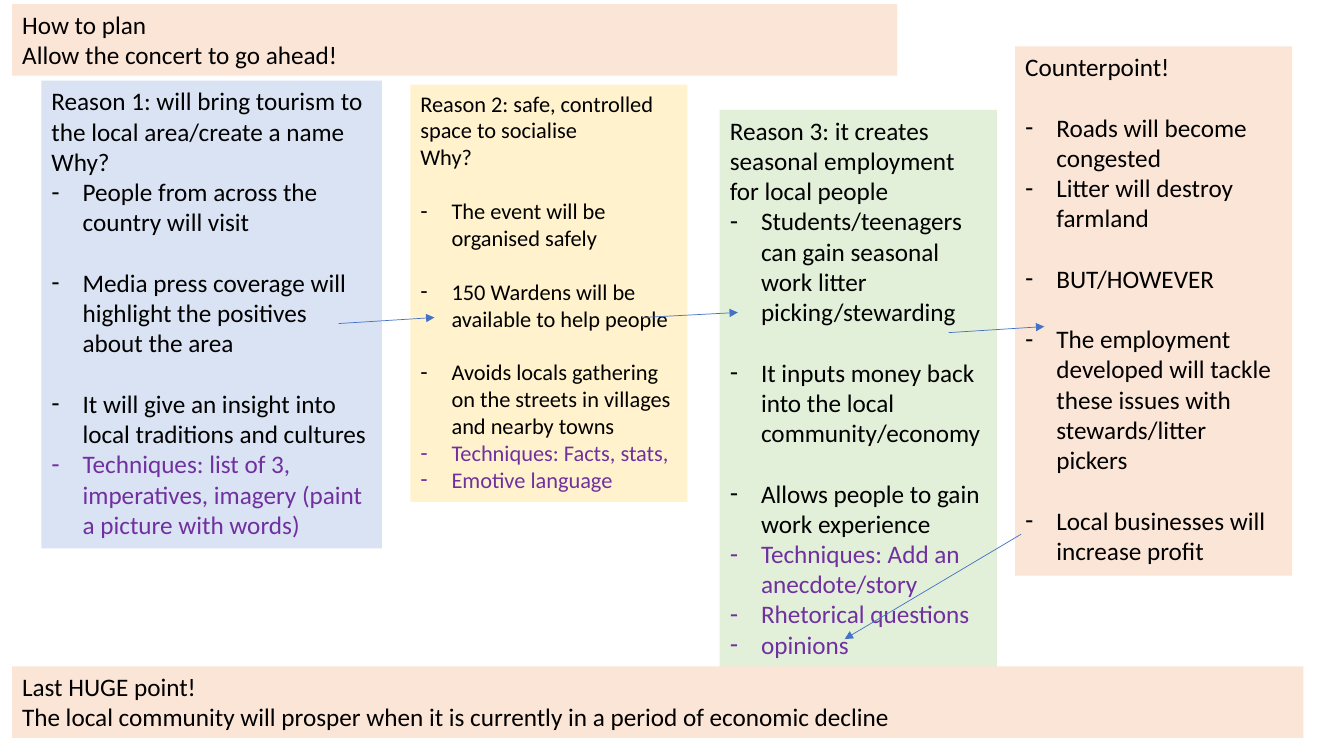
from lxml.etree import SubElement
from pptx import Presentation
from pptx.dml.color import RGBColor
from pptx.enum.shapes import MSO_CONNECTOR
from pptx.enum.text import MSO_ANCHOR, MSO_AUTO_SIZE, PP_ALIGN
from pptx.oxml.ns import qn
from pptx.util import Inches, Pt

COLOURS = {
    "blue": "DAE3F3",
    "peach": "FBE5D6",
    "yellow": "FFF2CC",
    "green": "E2F0D9",
    "black": "000000",
    "purple": "7030A0",
    "arrow": "4472C4",
}
COMPARISON_LAYOUT = 4
GRID_COLUMNS, GRID_ROWS = 160, 90
LINE_HEIGHT = 1.2

POINT = {"bullet": True}
SPACED_POINT = {"bullet": True, "gap": True}
TECHNIQUE = {"bullet": True, "colour": "purple"}

HEADING = [("How to plan", {}), ("Allow the concert to go ahead!", {})]
CONCLUSION = [
    ("Last HUGE point!", {}),
    ("The local community will prosper when it is currently in a period of economic decline", {}),
]
TOURISM = [
    ("Reason 1: will bring tourism to the local area/create a name", {}),
    ("Why?", {}),
    ("People from across the country will visit", POINT),
    ("Media press coverage will highlight the positives about the area", SPACED_POINT),
    ("It will give an insight into local traditions and cultures", SPACED_POINT),
    ("Techniques: list of 3, imperatives, imagery (paint a picture with words)", TECHNIQUE),
]
SAFETY = [
    ("Reason 2: safe, controlled space to socialise", {}),
    ("Why?", {}),
    ("The event will be organised safely", SPACED_POINT),
    ("150 Wardens will be available to help people", SPACED_POINT),
    ("Avoids locals gathering on the streets in villages and nearby towns", SPACED_POINT),
    ("Techniques: Facts, stats,", TECHNIQUE),
    ("Emotive language", TECHNIQUE),
]
EMPLOYMENT = [
    ("Reason 3: it creates seasonal employment for local people", {}),
    ("Students/teenagers can gain seasonal work litter picking/stewarding", POINT),
    ("It inputs money back into the local community/economy", SPACED_POINT),
    ("Allows people to gain work experience", SPACED_POINT),
    ("Techniques: Add an anecdote/story", TECHNIQUE),
    ("Rhetorical questions", TECHNIQUE),
    ("opinions", TECHNIQUE),
]
COUNTERPOINT = [
    ("Counterpoint!", {}),
    ("Roads will become congested", SPACED_POINT),
    ("Litter will destroy farmland", POINT),
    ("BUT/HOWEVER", SPACED_POINT),
    ("The employment developed will tackle these issues with stewards/litter pickers", SPACED_POINT),
    ("Local businesses will increase profit", SPACED_POINT),
]
REASONS = [
    (1, TOURISM, (4.92, 9.6, 40.56, 55.68), "blue", 18),
    (2, SAFETY, (48.84, 10.08, 33, 49.68), "yellow", 16),
    (3, EMPLOYMENT, (85.68, 13.08, 33, 66.6), "green", 18),
    (4, COUNTERPOINT, (120.84, 5.52, 33, 63), "peach", 18),
]
ARROWS = [
    ((40.32, 38.52), (51.72, 37.8)),
    ((76.44, 37.8), (87.84, 37.2)),
    ((112.92, 39.6), (124.32, 38.88)),
    ((121.56, 63.6), (100.56, 76.08)),
]


def write(para, text, size=18, colour="black", bullet=False, gap=False, font="Calibri"):
    properties = para._p.get_or_add_pPr()
    indent = Inches(0.31) if bullet else 0
    properties.set("marL", str(indent))
    properties.set("indent", str(-indent))
    if bullet:
        SubElement(properties, qn("a:buChar"), char="-")
    else:
        SubElement(properties, qn("a:buNone"))
    para.alignment = PP_ALIGN.LEFT
    para.line_spacing = 1.0
    para.space_before = Pt(size * LINE_HEIGHT if gap else 0)
    para.space_after = Pt(0)
    span = para.add_run()
    span.text = text
    span.font.name = font
    span.font.size = Pt(size)
    span.font.bold = False
    span.font.color.rgb = RGBColor.from_string(COLOURS[colour])


class PlanSlide:
    def __init__(self, deck):
        self.page = deck.slides.add_slide(deck.slide_layouts[COMPARISON_LAYOUT])
        self.column = deck.slide_width / GRID_COLUMNS
        self.row = deck.slide_height / GRID_ROWS

    def place(self, column, row):
        return round(column * self.column), round(row * self.row)

    def fill_box(self, box, lines, area, colour, size=18):
        box.left, box.top = self.place(*area[:2])
        box.width, box.height = self.place(*area[2:])
        box.fill.solid()
        box.fill.fore_color.rgb = RGBColor.from_string(COLOURS[colour])
        frame = box.text_frame
        frame.word_wrap = True
        frame.auto_size = MSO_AUTO_SIZE.NONE
        frame.vertical_anchor = MSO_ANCHOR.TOP
        frame.margin_left = frame.margin_right = Inches(0.1)
        frame.margin_top = frame.margin_bottom = Inches(0.05)
        for number, (text, style) in enumerate(lines):
            para = frame.add_paragraph() if number else frame.paragraphs[0]
            write(para, text, size=size, **style)

    def title(self, lines, area, colour):
        self.fill_box(self.page.shapes.title, lines, area, colour)

    def reason(self, position, lines, area, colour, size):
        self.fill_box(self.page.placeholders[position], lines, area, colour, size)

    def banner(self, lines, area, colour):
        box = self.page.shapes.add_textbox(0, 0, 0, 0)
        self.fill_box(box, lines, area, colour)

    def arrow(self, start, end):
        connector = self.page.shapes.add_connector(
            MSO_CONNECTOR.STRAIGHT, *self.place(*start), *self.place(*end)
        )
        connector.line.width = Pt(0.5)
        connector.line.color.rgb = RGBColor.from_string(COLOURS["arrow"])
        SubElement(connector.line._get_or_add_ln(), qn("a:tailEnd"), type="triangle")
        SubElement(connector._element.spPr, qn("a:effectLst"))


def main():
    deck = Presentation()
    deck.slide_width, deck.slide_height = Inches(13.33), Inches(7.5)
    plan = PlanSlide(deck)
    plan.title(HEADING, (1.44, 0.48, 105.36, 8.52), "peach")
    for reason in REASONS:
        plan.reason(*reason)
    plan.banner(CONCLUSION, (1.44, 79.32, 153.72, 8.52), "peach")
    for start, end in ARROWS:
        plan.arrow(start, end)
    deck.save("out.pptx")


if __name__ == "__main__":
    main()
